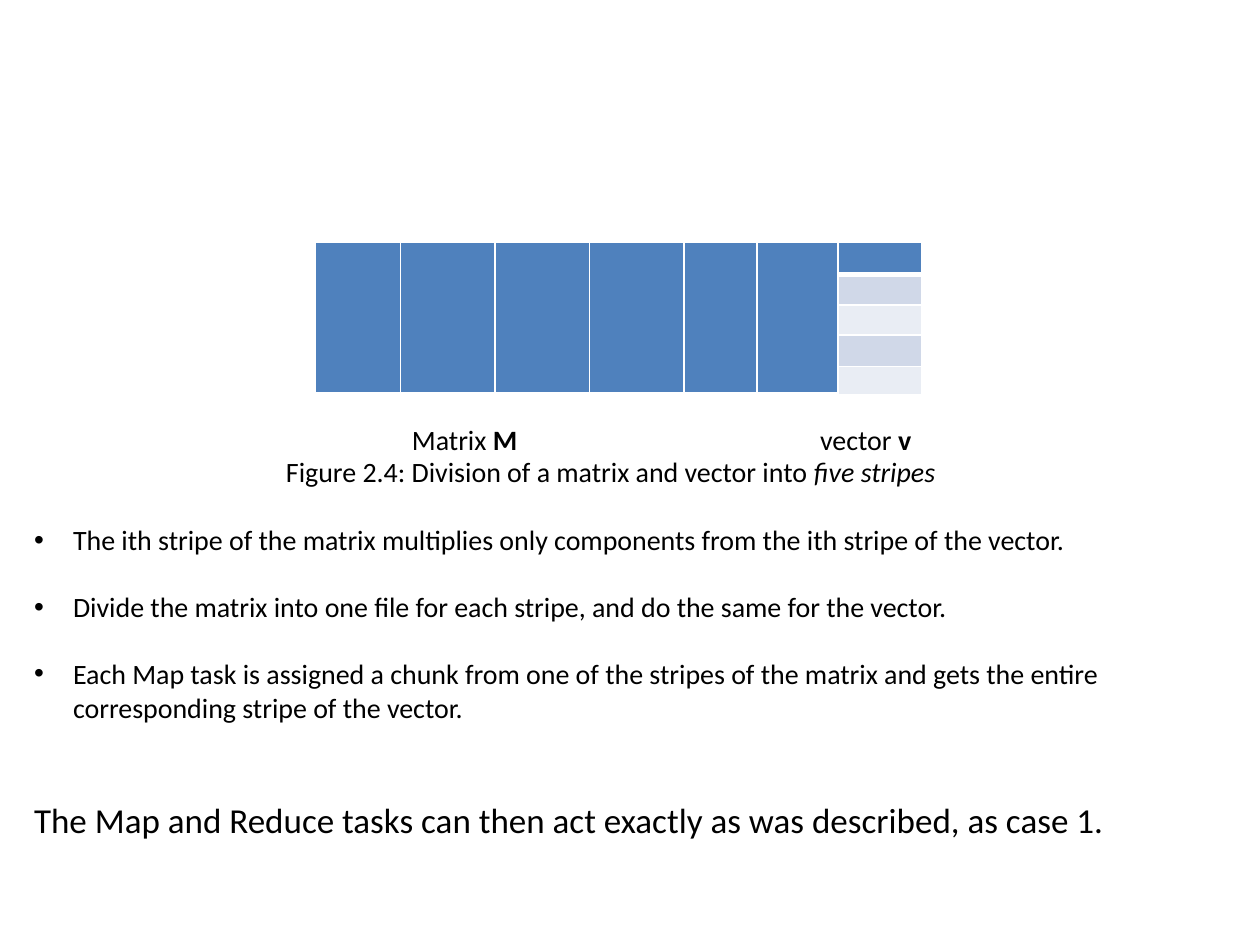
from dataclasses import dataclass

from lxml import etree
from pptx import Presentation
from pptx.dml.color import RGBColor
from pptx.enum import text
from pptx.oxml import ns
from pptx.util import Inches, Pt

BLACK = RGBColor(0x00, 0x00, 0x00)
WHITE = RGBColor(0xFF, 0xFF, 0xFF)
BLUE = RGBColor(0x4F, 0x81, 0xBD)
BAND_DARK = RGBColor(0xD0, 0xD8, 0xE8)
BAND_LIGHT = RGBColor(0xE9, 0xED, 0xF4)
FONT = "Calibri"

STRIPE_WIDTHS = [0.68, 0.75, 0.75, 0.75, 0.58, 0.64]
VECTOR_WIDTH = 0.67
ROW_HEIGHTS = [0.26, 0.24, 0.24, 0.25, 0.22]
VECTOR_FILLS = [BLUE, BAND_DARK, BAND_LIGHT, BAND_DARK, BAND_LIGHT]
HANG = Inches(0.31)


@dataclass
class Label:
    left: float
    top: float
    width: float
    plain: str
    bold: str = ""
    italic: str = ""


LABELS = [
    Label(3.27, 3.35, 1.5, "Matrix ", bold="M"),
    Label(6.51, 3.35, 1.2, "vector ", bold="v"),
    Label(2.27, 3.61, 5.6, "Figure 2.4: Division of a matrix and vector into ",
          italic="five stripes"),
]
POINTS = [
    "The ith stripe of the matrix multiplies only components from the ith stripe of the vector.",
    "Divide the matrix into one file for each stripe, and do the same for the vector.",
    "Each Map task is assigned a chunk from one of the stripes of the matrix and gets the entire "
    "corresponding stripe of the vector.",
]
CONCLUSION = "The Map and Reduce tasks can then act exactly as was described, as case 1."


def add_run(p, content: str, *, size: float = 16, bold: bool = False,
            italic: bool = False) -> None:
    r = p.add_run()
    r.text = content
    f = r.font
    f.name, f.size, f.bold, f.italic = FONT, Pt(size), bold, italic
    f.color.rgb = BLACK


def add_box(s, left: float, top: float, width: float, height: float):
    tf = s.shapes.add_textbox(Inches(left), Inches(top), Inches(width), Inches(height)).text_frame
    tf.word_wrap = True
    tf.vertical_anchor = text.MSO_ANCHOR.TOP
    tf.margin_left = tf.margin_right = tf.margin_top = tf.margin_bottom = 0
    return tf


def add_label(s, label: Label) -> None:
    p = add_box(s, label.left, label.top, label.width, 0.27).paragraphs[0]
    add_run(p, label.plain)
    if label.bold:
        add_run(p, label.bold, bold=True)
    if label.italic:
        add_run(p, label.italic, italic=True)


def set_bullet(p) -> None:
    pPr = p._p.get_or_add_pPr()
    pPr.set("marL", str(HANG))
    pPr.set("indent", str(-HANG))
    etree.SubElement(pPr, ns.qn("a:buFont")).set("typeface", "Arial")
    etree.SubElement(pPr, ns.qn("a:buChar")).set("char", "•")


def style_cell(cell, fill: RGBColor, bottom: float) -> None:
    """Fill an empty cell, give it white borders and keep its row low."""
    cell.margin_top = cell.margin_bottom = 0
    end = etree.SubElement(cell.text_frame.paragraphs[0]._p, ns.qn("a:endParaRPr"))
    end.set("sz", "800")
    tcPr = cell._tc.get_or_add_tcPr()
    for side, width in (("L", 1), ("R", 1), ("T", 1), ("B", bottom)):
        ln = etree.SubElement(tcPr, ns.qn(f"a:ln{side}"))
        ln.set("w", str(Pt(width)))
        line_fill = etree.SubElement(ln, ns.qn("a:solidFill"))
        etree.SubElement(line_fill, ns.qn("a:srgbClr")).set("val", str(WHITE))
    cell.fill.solid()
    cell.fill.fore_color.rgb = fill


def add_stripes(s) -> None:
    """Draw the matrix as tall merged stripes beside the five parts of the vector."""
    widths = STRIPE_WIDTHS + [VECTOR_WIDTH]
    last = len(ROW_HEIGHTS) - 1
    table = s.shapes.add_table(len(ROW_HEIGHTS), len(widths), Inches(2.5), Inches(1.92),
                               Inches(sum(widths)), Inches(sum(ROW_HEIGHTS))).table
    for col, width in zip(table.columns, widths):
        col.width = Inches(width)
    for i, (row, height) in enumerate(zip(table.rows, ROW_HEIGHTS)):
        row.height = Inches(height)
        for j, cell in enumerate(row.cells):
            in_matrix = j < len(STRIPE_WIDTHS)
            style_cell(cell, BLUE if in_matrix else VECTOR_FILLS[i],
                       3 if in_matrix or i == 0 else 1)
    for j in range(len(STRIPE_WIDTHS)):
        table.cell(0, j).merge(table.cell(last, j))


def add_body(s) -> None:
    tf = add_box(s, 0.27, 4.15, 8.61, 2.6)
    for i, point in enumerate(POINTS):
        p = tf.paragraphs[0] if i == 0 else tf.add_paragraph()
        p.space_after = Pt(19)
        add_run(p, point)
        set_bullet(p)
    p.space_after = Pt(43)
    add_run(tf.add_paragraph(), CONCLUSION, size=20)


def main() -> None:
    prs = Presentation()
    prs.slide_width, prs.slide_height = Inches(10), Inches(7.5)
    s = prs.slides.add_slide(prs.slide_layouts[6])
    add_stripes(s)
    for label in LABELS:
        add_label(s, label)
    add_body(s)
    prs.save("out.pptx")


if __name__ == "__main__":
    main()
